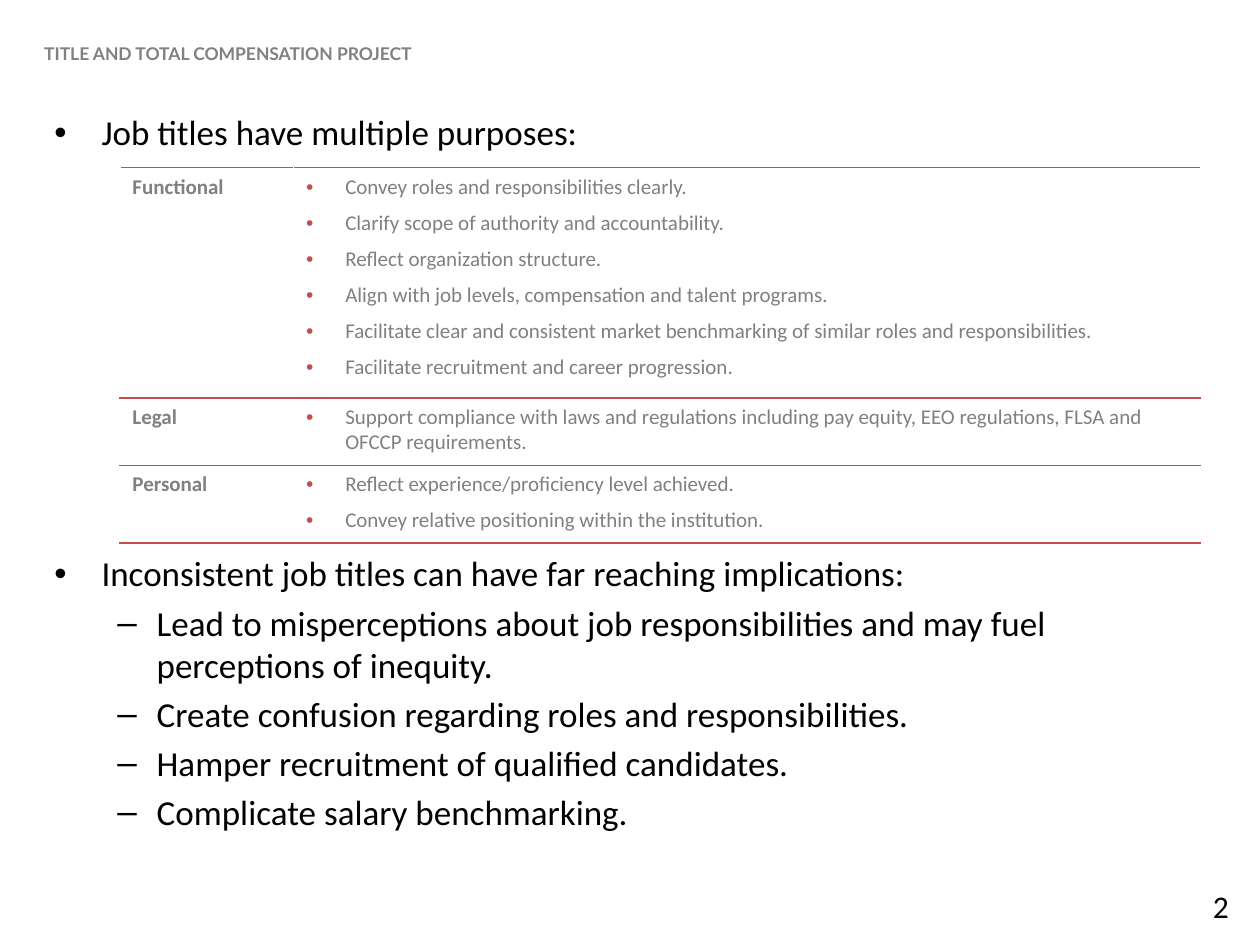
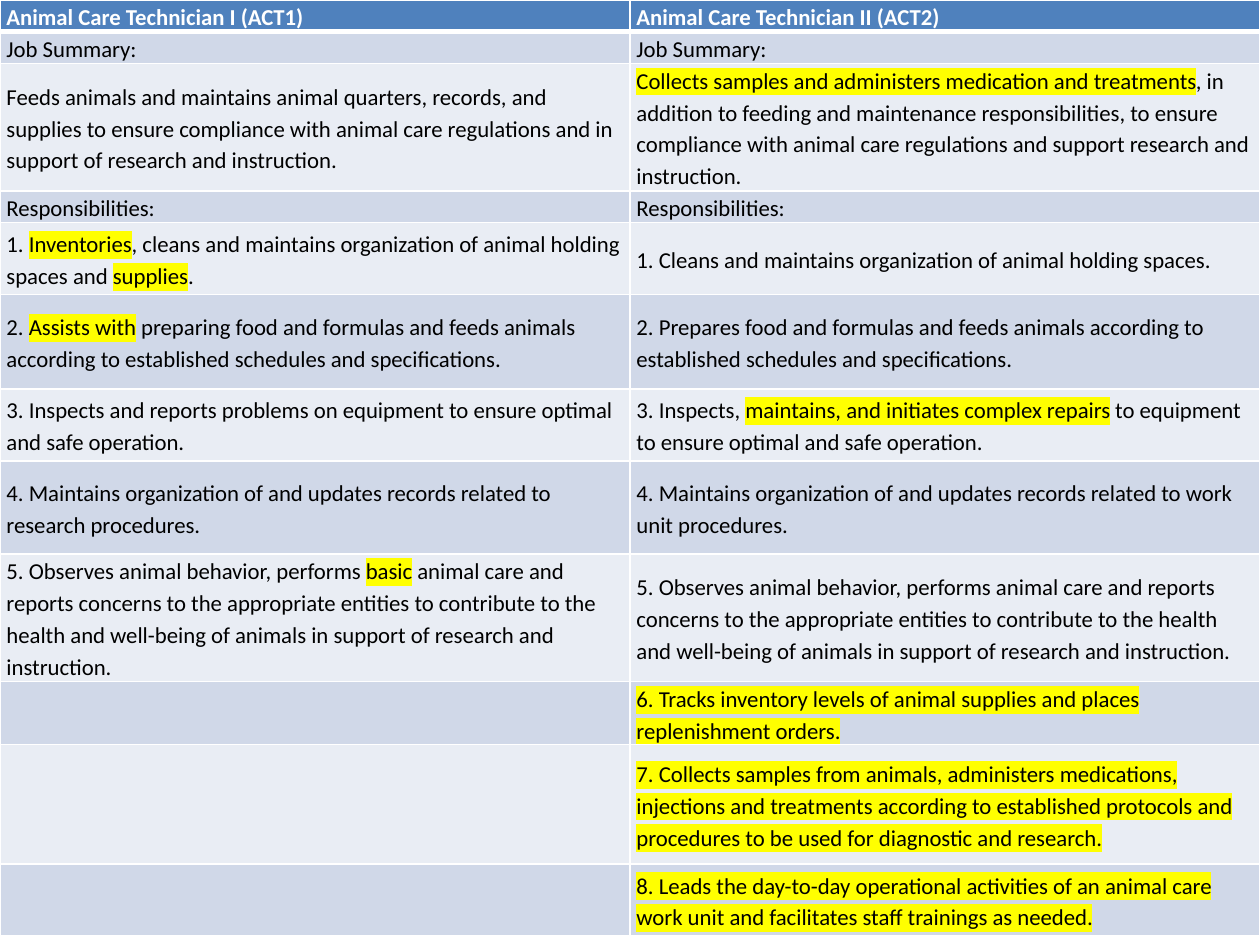
from pptx import Presentation
from pptx import util as u
from pptx.dml.color import RGBColor
from pptx.enum import text
from pptx.oxml import parse_xml
from pptx.oxml.ns import nsdecls

COLORS = {
    "black": "000000", "white": "FFFFFF", "grey": "808080", "red": "C0504D",
    "header": "4F81BD", "band": "D0D8E8", "light_band": "E9EDF4",
    "highlight": "FFFF00",
}
BODY_FONT, HEADER_FONT = "Calibri", "Lato"
SLIDE_SIZE = 25.4, 19.05

PURPOSES = [
    ("Functional", [
        "Convey roles and responsibilities clearly.",
        "Clarify scope of authority and accountability.",
        "Reflect organization structure.",
        "Align with job levels, compensation and talent programs.",
        "Facilitate clear and consistent market benchmarking of similar roles and responsibilities.",
        "Facilitate recruitment and career progression.",
    ]),
    ("Legal", [
        "Support compliance with laws and regulations including pay equity, EEO regulations, "
        "FLSA and OFCCP requirements.",
    ]),
    ("Personal", [
        "Reflect experience/proficiency level achieved.",
        "Convey relative positioning within the institution.",
    ]),
]
PURPOSE_ROW_HEIGHTS = [4.64, 1.36, 1.57]

# Level, space before in points, text
JOB_TITLE_POINTS = [
    (0, 0, "Job titles have multiple purposes:"),
    (0, 228, "Inconsistent job titles can have far reaching implications:"),
    (1, 4, "Lead to misperceptions about job responsibilities and may fuel perceptions of inequity."),
    (1, 4, "Create confusion regarding roles and responsibilities."),
    (1, 4, "Hamper recruitment of qualified candidates."),
    (1, 4, "Complicate salary benchmarking."),
]

# Row height in cm, first job, second job; *asterisks* enclose highlighted words
JOB_ROWS = [
    (0.64, "Animal Care Technician I (ACT1)", "Animal Care Technician II (ACT2)"),
    (0.64, "Job Summary:", "Job Summary:"),
    (2.57,
     "Feeds animals and maintains animal quarters, records, and supplies to ensure compliance "
     "with animal care regulations and in support of research and instruction.",
     "*Collects samples and administers medication and treatments*, in addition to feeding and "
     "maintenance responsibilities, to ensure compliance with animal care regulations and "
     "support research and instruction."),
    (0.64, "Responsibilities:", "Responsibilities:"),
    (1.45,
     "1. *Inventories*, cleans and maintains organization of animal holding spaces and *supplies*.",
     "1. Cleans and maintains organization of animal holding spaces."),
    (1.9,
     "2. *Assists with* preparing food and formulas and feeds animals according to established "
     "schedules and specifications.",
     "2. Prepares food and formulas and feeds animals according to established schedules and "
     "specifications."),
    (1.45,
     "3. Inspects and reports problems on equipment to ensure optimal and safe operation.",
     "3. Inspects, *maintains, and initiates complex repairs* to equipment to ensure optimal "
     "and safe operation."),
    (1.88,
     "4. Maintains organization of and updates records related to research procedures.",
     "4. Maintains organization of and updates records related to work unit procedures."),
    (2.57,
     "5. Observes animal behavior, performs *basic* animal care and reports concerns to the "
     "appropriate entities to contribute to the health and well-being of animals in support of "
     "research and instruction.",
     "5. Observes animal behavior, performs animal care and reports concerns to the appropriate "
     "entities to contribute to the health and well-being of animals in support of research and "
     "instruction."),
    (1.27, "",
     "*6. Tracks inventory levels of animal supplies and places replenishment orders.*"),
    (2.41, "",
     "*7. Collects samples from animals, administers medications, injections and treatments "
     "according to established protocols and procedures to be used for diagnostic and research.*"),
    (1.45, "",
     "*8. Leads the day-to-day operational activities of an animal care work unit and "
     "facilitates staff trainings as needed.*"),
]


def cm_box(box):
    return [u.Cm(length) for length in box]


def place(shape, box):
    shape.left, shape.top, shape.width, shape.height = cm_box(box)


def set_font(paragraph, size, color="black", bold=False, name=BODY_FONT):
    font = paragraph.font
    font.name, font.size, font.bold = name, u.Pt(size), bold
    font.color.rgb = RGBColor.from_string(COLORS[color])


def format_cell(cell, fill, margins, borders):
    """Set fill, (side, top) margins in cm and borders given as {edge: (color, points)}."""
    cell.fill.solid()
    cell.fill.fore_color.rgb = RGBColor.from_string(COLORS[fill])
    cell.margin_left = cell.margin_right = u.Cm(margins[0])
    cell.margin_top = cell.margin_bottom = u.Cm(margins[1])
    properties = cell._tc.get_or_add_tcPr()
    for position, edge in enumerate("LRTB"):
        color, points = borders[edge]
        properties.insert(position, parse_xml(
            f'<a:ln{edge} {nsdecls("a")} w="{u.Pt(points)}"><a:solidFill>'
            f'<a:srgbClr val="{COLORS[color]}"/></a:solidFill></a:ln{edge}>'))


def add_plain_table(slide, box, column_widths, row_heights):
    table = slide.shapes.add_table(
        len(row_heights), len(column_widths), *cm_box(box)).table
    table.first_row = table.horz_banding = False
    for column, width in zip(table.columns, column_widths):
        column.width = u.Cm(width)
    for row, height in zip(table.rows, row_heights):
        row.height = u.Cm(height)
    return table


def add_red_bullet(paragraph):
    properties = paragraph._p.get_or_add_pPr()
    indent = u.Cm(0.79)
    properties.set("marL", str(indent))
    properties.set("indent", str(-indent))
    for element in (f'<a:buClr {nsdecls("a")}><a:srgbClr val="{COLORS["red"]}"/></a:buClr>',
                    f'<a:buFont {nsdecls("a")} typeface="Arial"/>',
                    f'<a:buChar {nsdecls("a")} char="•"/>'):
        properties.append(parse_xml(element))


def add_highlighted_text(paragraph, marked_text):
    for index, part in enumerate(marked_text.split("*")):
        if not part:
            continue
        run = paragraph.add_run()
        run.text = part
        if index % 2:
            run._r.get_or_add_rPr().append(parse_xml(
                f'<a:highlight {nsdecls("a")}>'
                f'<a:srgbClr val="{COLORS["highlight"]}"/></a:highlight>'))


def fill_header(slide, box):
    title = slide.shapes.title
    place(title, box)
    frame = title.text_frame
    frame.text = "TITLE AND TOTAL COMPENSATION PROJECT"
    frame.auto_size = text.MSO_AUTO_SIZE.NONE
    frame.vertical_anchor = text.MSO_ANCHOR.MIDDLE
    frame.margin_left, frame.margin_right = u.Cm(0.89), u.Cm(1.27)
    paragraph = frame.paragraphs[0]
    paragraph.alignment = text.PP_ALIGN.LEFT
    set_font(paragraph, 10, "grey", True, HEADER_FONT)


def add_page_number(slide, box, number):
    frame = slide.shapes.add_textbox(*cm_box(box)).text_frame
    frame.word_wrap = True
    frame.text = str(number)
    paragraph = frame.paragraphs[0]
    paragraph.alignment = text.PP_ALIGN.RIGHT
    set_font(paragraph, 18)


def fill_points(slide, box):
    body = slide.placeholders[1]
    place(body, box)
    frame = body.text_frame
    frame.text = "\n".join(point for _, _, point in JOB_TITLE_POINTS)
    frame.auto_size = text.MSO_AUTO_SIZE.NONE
    for paragraph, (level, space, _) in zip(frame.paragraphs, JOB_TITLE_POINTS):
        paragraph.level = level
        paragraph.space_before = u.Pt(space)
        set_font(paragraph, 20)


def add_purpose_table(slide, box):
    label_width = 3.5
    table = add_plain_table(slide, box, [label_width, box[2] - label_width],
                            PURPOSE_ROW_HEIGHTS)
    borders = {"L": ("white", 1), "R": ("white", 1), "T": ("red", 1), "B": ("red", 1)}
    for row, (label, purposes) in zip(table.rows, PURPOSES):
        for cell in row.cells:
            format_cell(cell, "white", (0.25, 0.13), borders)
        label_cell, purpose_cell = row.cells
        label_cell.text = label
        set_font(label_cell.text_frame.paragraphs[0], 12, "grey", True)
        purpose_cell.text = "\n".join(purposes)
        for index, paragraph in enumerate(purpose_cell.text_frame.paragraphs):
            add_red_bullet(paragraph)
            paragraph.space_before = u.Pt(6 if index else 0)
            set_font(paragraph, 12, "grey")


def add_job_table(slide, box):
    table = add_plain_table(slide, box, [box[2] / 2] * 2,
                            [height for height, *_ in JOB_ROWS])
    for index, (row, (_, *descriptions)) in enumerate(zip(table.rows, JOB_ROWS)):
        is_header = index == 0
        fill = "header" if is_header else ("light_band", "band")[index % 2]
        borders = dict.fromkeys("LRTB", ("white", 1))
        if is_header:
            borders["B"] = ("white", 3)
        elif index == 1:
            borders["T"] = ("white", 3)
        for cell, description in zip(row.cells, descriptions):
            format_cell(cell, fill, (0.13, 0), borders)
            cell.vertical_anchor = text.MSO_ANCHOR.MIDDLE
            paragraph = cell.text_frame.paragraphs[0]
            paragraph.line_spacing = 1.15
            add_highlighted_text(paragraph, description)
            set_font(paragraph, 13, "white" if is_header else "black", is_header)


def build_purposes_slide(presentation):
    slide = presentation.slides.add_slide(presentation.slide_layouts[1])
    fill_header(slide, (0, 0.61, SLIDE_SIZE[0], 0.94))
    fill_points(slide, (0.84, 2.11, 23.7, 16.08))
    add_purpose_table(slide, (2.42, 3.38, 21.78, sum(PURPOSE_ROW_HEIGHTS)))
    add_page_number(slide, (20.96, 17.75, 4.06, 1.02), 2)


def build_jobs_slide(presentation):
    slide = presentation.slides.add_slide(presentation.slide_layouts[6])
    add_job_table(slide, (0, 0, SLIDE_SIZE[0], sum(height for height, *_ in JOB_ROWS)))


def main():
    presentation = Presentation()
    presentation.slide_width, presentation.slide_height = cm_box(SLIDE_SIZE)
    build_purposes_slide(presentation)
    build_jobs_slide(presentation)
    presentation.save("out.pptx")


if __name__ == "__main__":
    main()
